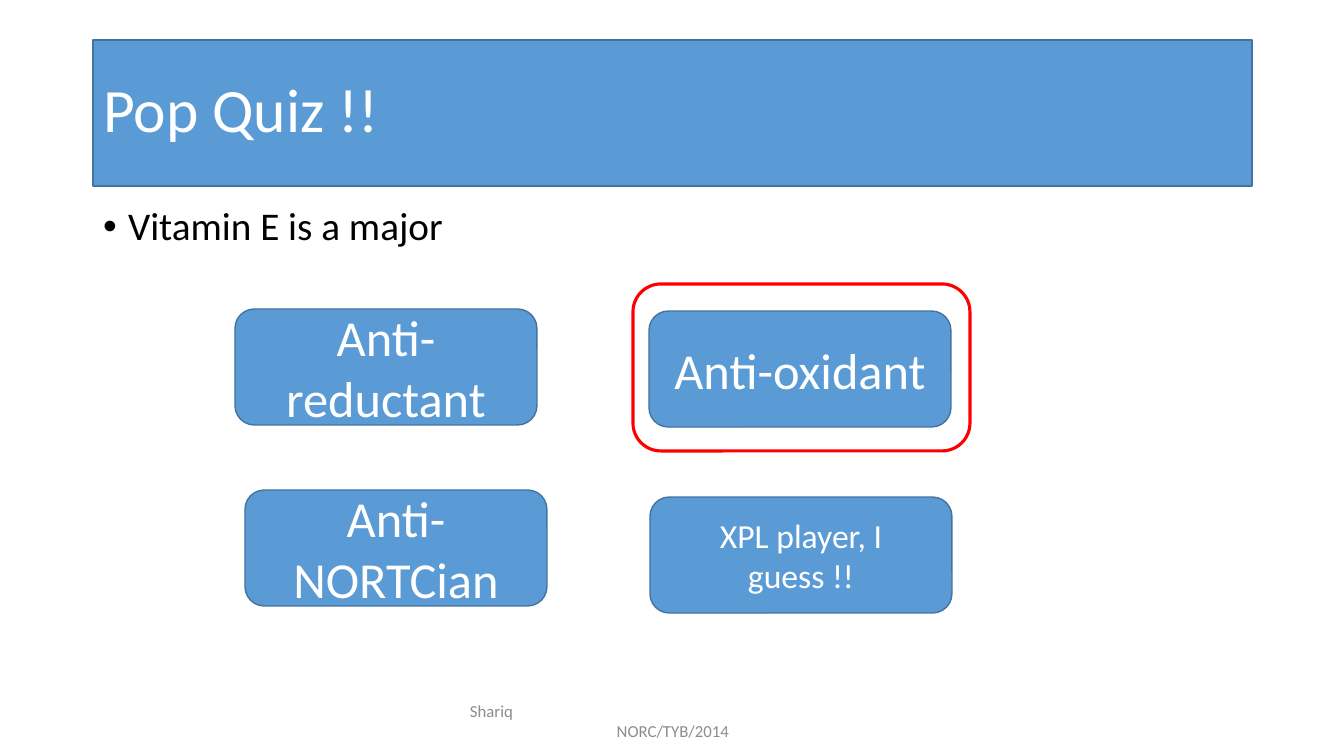
from pptx import Presentation
from pptx import util as u
from pptx.dml.color import RGBColor
from pptx.enum import shapes, text

THEME = {
    "font": "Calibri",
    "fill": "5B9BD5", "edge": "43739E", "ring": "FF0000",
    "light": "FFFFFF", "dark": "000000", "muted": "8C8C8C",
    "title": 44, "body": 28, "answer": 36, "small": 24, "footer": 12,
}


def px(n):
    return u.Inches(n / 100.8)


def write(sp, lines, size, color, align, anchor, **spacing):
    tf = sp.text_frame
    frame = {"word_wrap": True, "auto_size": text.MSO_AUTO_SIZE.NONE,
             "vertical_anchor": anchor}
    for name, value in frame.items():
        setattr(tf, name, value)
    tf.text = "\n".join(lines)
    for p in tf.paragraphs:
        for name, value in {"alignment": align, **spacing}.items():
            setattr(p, name, value)
        r = p.runs[0]
        for name, value in {"name": THEME["font"], "size": u.Pt(THEME[size])}.items():
            setattr(r.font, name, value)
        r.font.color.rgb = RGBColor.from_string(THEME[color])


LEFT, CENTER = text.PP_ALIGN.LEFT, text.PP_ALIGN.CENTER
TOP, MIDDLE = text.MSO_ANCHOR.TOP, text.MSO_ANCHOR.MIDDLE

prs = Presentation()
prs.slide_width, prs.slide_height = px(1344), px(756)
s = prs.slides.add_slide(prs.slide_layouts[1])
title, body = s.placeholders

for sp, y, h in [(title, 40, 146), (body, 202, 80)]:
    box = {"left": px(93), "top": px(y), "width": px(1159), "height": px(h)}
    for name, value in box.items():
        setattr(sp, name, value)

write(title, ["Pop Quiz !!"], "title", "light", LEFT, MIDDLE, line_spacing=0.9)
write(body, ["Vitamin E is a major"], "body", "dark", LEFT, TOP,
      line_spacing=0.9, space_before=u.Pt(10))
pPr = body.text_frame.paragraphs[0]._p.get_or_add_pPr()
for name, value in {"marL": px(25), "indent": -px(25)}.items():
    pPr.set(name, str(value))

filled = [title]
answers = [
    ("Anti-reductant", 235, 309, "answer"),
    ("Anti-oxidant", 649, 311, "answer"),
    ("Anti-NORTCian", 245, 490, "answer"),
    ("XPL player, I guess !!", 650, 497, "small"),
]
for label, x, y, size in answers:
    sp = s.shapes.add_shape(shapes.MSO_SHAPE.ROUNDED_RECTANGLE,
                            px(x), px(y), px(302), px(116))
    sp.shadow.inherit = False
    write(sp, [label], size, "light", CENTER, MIDDLE)
    filled.append(sp)

for sp in filled:
    sp.fill.solid()
    sp.fill.fore_color.rgb = RGBColor.from_string(THEME["fill"])
    sp.line.color.rgb = RGBColor.from_string(THEME["edge"])
    sp.line.width = u.Pt(1)

ring = s.shapes.add_shape(shapes.MSO_SHAPE.ROUNDED_RECTANGLE,
                          px(633), px(284), px(337), px(167))
ring.shadow.inherit = False
ring.fill.background()
ring.line.color.rgb = RGBColor.from_string(THEME["ring"])
ring.line.width = u.Pt(2.25)

footer = s.shapes.add_textbox(px(446), px(701), px(454), px(40))
write(footer, ["Shariq", "NORC/TYB/2014"], "footer", "muted", CENTER, MIDDLE)
p = footer.text_frame.paragraphs[0]
p.alignment = LEFT
p._p.get_or_add_pPr().set("marL", str(px(14)))

prs.save("out.pptx")
